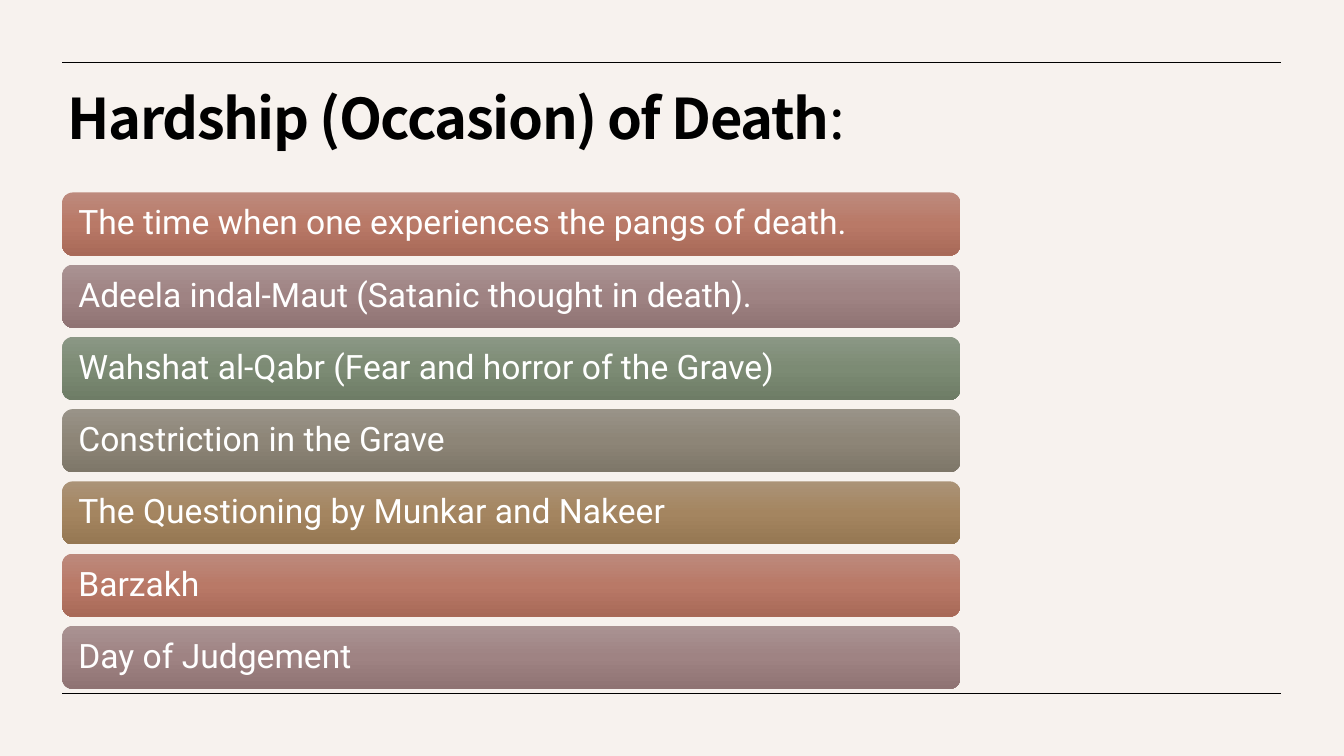
from copy import deepcopy
from dataclasses import dataclass

from lxml import etree
from pptx import Presentation
from pptx.dml.color import RGBColor
from pptx.enum.shapes import MSO_CONNECTOR, MSO_SHAPE
from pptx.enum.text import MSO_ANCHOR, MSO_AUTO_SIZE, PP_ALIGN
from pptx.oxml.ns import qn
from pptx.slide import Slide
from pptx.text.text import _Paragraph
from pptx.util import Cm, Pt

ROUNDED = MSO_SHAPE.ROUNDED_RECTANGLE
STRAIGHT = MSO_CONNECTOR.STRAIGHT
TOP, MIDDLE = MSO_ANCHOR.TOP, MSO_ANCHOR.MIDDLE
LEFT = PP_ALIGN.LEFT
NO_AUTOFIT = MSO_AUTO_SIZE.NONE

CREAM = RGBColor(0xF7, 0xF2, 0xEE)
BLACK = RGBColor(0x00, 0x00, 0x00)
WHITE = RGBColor(0xFF, 0xFF, 0xFF)
TITLE_FONT = "Noto Sans CJK KR"
BODY_FONT = "Roboto"

MARGIN = 1.57
RULE_RIGHT = 32.28
RULE_HEIGHTS = (1.57, 17.48)
BAR_TOP, BAR_WIDTH, BAR_HEIGHT, BAR_PITCH = 4.85, 22.63, 1.59, 1.82
BAR_INSET = 0.33


@dataclass(frozen=True)
class Shade:
    light: RGBColor
    middle: RGBColor
    dark: RGBColor


@dataclass(frozen=True)
class Stage:
    text: str
    shade: Shade


TERRACOTTA = Shade(RGBColor(0xBD, 0x8A, 0x7D), RGBColor(0xB9, 0x79, 0x67), RGBColor(0xA8, 0x69, 0x58))
MAUVE = Shade(RGBColor(0xA9, 0x92, 0x92), RGBColor(0x9F, 0x83, 0x83), RGBColor(0x8F, 0x73, 0x73))
SAGE = Shade(RGBColor(0x8B, 0x97, 0x85), RGBColor(0x7C, 0x8B, 0x74), RGBColor(0x6E, 0x7C, 0x66))
STONE = Shade(RGBColor(0x99, 0x93, 0x88), RGBColor(0x8D, 0x85, 0x77), RGBColor(0x7E, 0x77, 0x69))
OCHRE = Shade(RGBColor(0xAB, 0x93, 0x77), RGBColor(0xA4, 0x85, 0x60), RGBColor(0x95, 0x77, 0x52))

STAGES = (
    Stage("The time when one experiences the pangs of death.", TERRACOTTA),
    Stage("Adeela indal-Maut (Satanic thought in death).", MAUVE),
    Stage("Wahshat al-Qabr (Fear and horror of the Grave)", SAGE),
    Stage("Constriction in the Grave", STONE),
    Stage("The Questioning by Munkar and Nakeer", OCHRE),
    Stage("Barzakh", TERRACOTTA),
    Stage("Day of Judgement", MAUVE),
)


def add_span(para: _Paragraph, text: str, *, font: str, size: float, color: RGBColor,
             bold: bool = False, spacing: float = 0) -> None:
    para.alignment = LEFT
    para.line_spacing = 0.9
    span = para.add_run()
    span.text = text
    span.font.name = font
    span.font.size = Pt(size)
    span.font.bold = bold
    span.font.color.rgb = color
    if spacing:
        span.font._element.set("spc", str(round(spacing * 100)))


def add_title(page: Slide) -> None:
    title = page.shapes.title
    title.left, title.top, title.width, title.height = Cm(1.45), Cm(2.18), Cm(30.86), Cm(2.92)
    frame = title.text_frame
    frame.word_wrap = True
    frame.auto_size = NO_AUTOFIT
    frame.vertical_anchor = TOP
    para = frame.paragraphs[0]
    para.space_after = Pt(6)
    for text, bold in (("Hardship (Occasion) of Death", True), (":", False)):
        add_span(para, text, font=TITLE_FONT, size=40, color=BLACK, bold=bold, spacing=-1)


def add_rule(page: Slide, height: float) -> None:
    rule = page.shapes.add_connector(STRAIGHT, Cm(RULE_RIGHT), Cm(height), Cm(MARGIN), Cm(height))
    rule.line.color.rgb = BLACK
    rule.line.width = Pt(0.5)
    etree.SubElement(rule._element.spPr, qn("a:effectLst"))


def add_bar(page: Slide, stage: Stage, top: float) -> None:
    bar = page.shapes.add_shape(ROUNDED, Cm(MARGIN), Cm(top), Cm(BAR_WIDTH), Cm(BAR_HEIGHT))
    bar.shadow.inherit = False
    bar.line.fill.background()
    bar.fill.gradient()
    bar.fill.gradient_angle = 270
    stop_list = bar._element.spPr.find(f".//{qn('a:gsLst')}")
    stop_list.append(deepcopy(stop_list[0]))
    colors = (stage.shade.light, stage.shade.middle, stage.shade.dark)
    for stop, position, color in zip(bar.fill.gradient_stops, (0, 0.5, 1), colors):
        stop.position = position
        stop.color.rgb = color

    frame = bar.text_frame
    frame.word_wrap = True
    frame.vertical_anchor = MIDDLE
    frame.margin_left = frame.margin_right = Cm(BAR_INSET)
    frame.margin_top = frame.margin_bottom = Cm(BAR_INSET)
    add_span(frame.paragraphs[0], stage.text, font=BODY_FONT, size=24, color=WHITE)


def main() -> None:
    deck = Presentation()
    deck.slide_width, deck.slide_height = Cm(33.87), Cm(19.05)
    page = deck.slides.add_slide(deck.slide_layouts.get_by_name("Title Only"))
    page.background.fill.solid()
    page.background.fill.fore_color.rgb = CREAM
    add_title(page)
    for height in RULE_HEIGHTS:
        add_rule(page, height)
    for index, stage in enumerate(STAGES):
        add_bar(page, stage, BAR_TOP + index * BAR_PITCH)
    deck.save("out.pptx")


if __name__ == "__main__":
    main()
